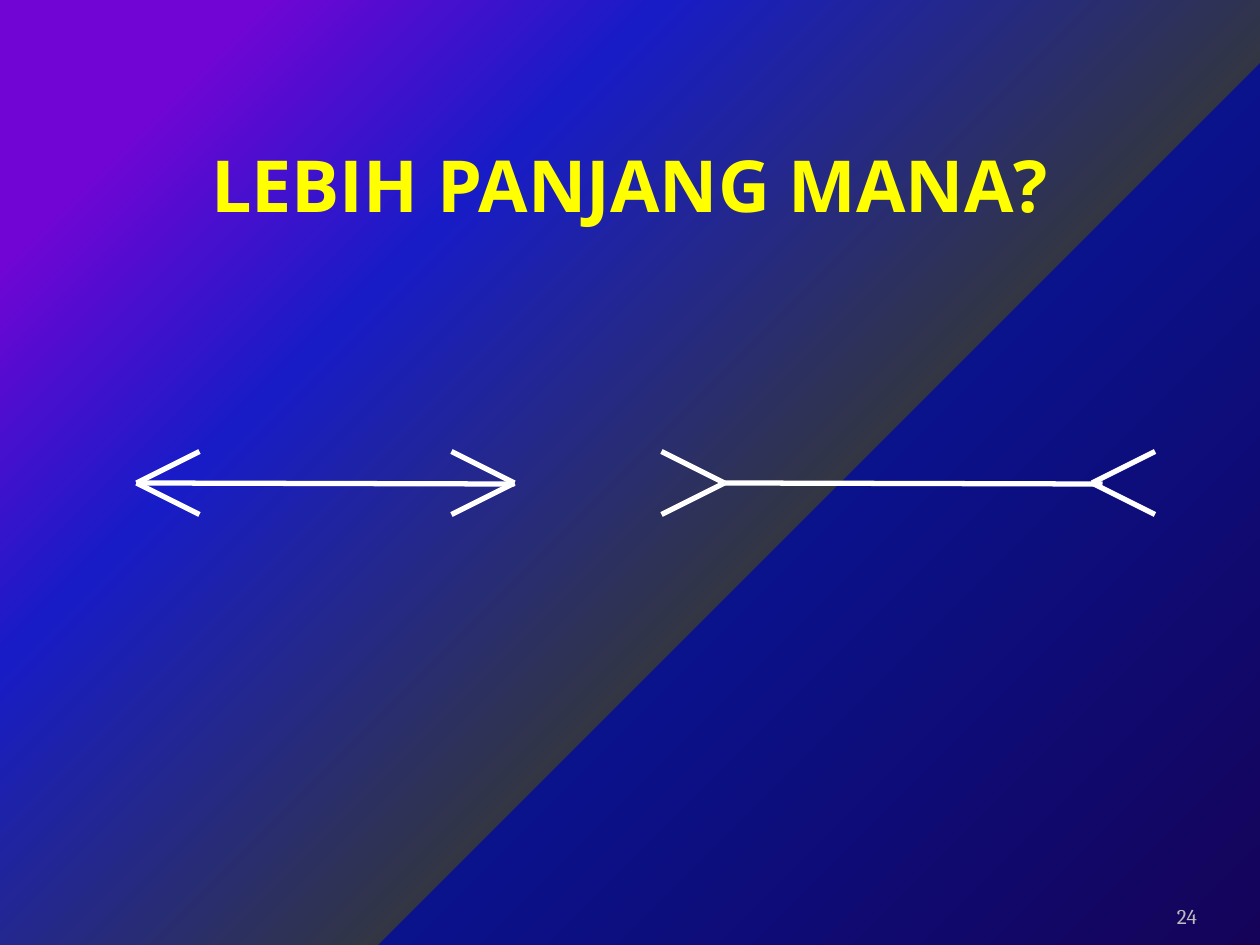
import dataclasses

import lxml.etree
import pptx
import pptx.dml.color
import pptx.enum.shapes
import pptx.enum.text
import pptx.oxml.ns
import pptx.util

ANCHOR = pptx.enum.text.MSO_ANCHOR
ALIGN = pptx.enum.text.PP_ALIGN
qn = pptx.oxml.ns.qn

GRID = 1 / 12  # inches per grid unit
AXIS_ROW = 46
SHAFT_SLOPE = 0.1  # the shafts fall very slightly to the right
FIN_WIDTH, FIN_HEIGHT = 6, 3


@dataclasses.dataclass(frozen=True)
class Theme:
    title_color: str = "FFFF00"
    number_color: str = "BDBDBD"
    line_color: str = "FFFFFF"
    title_font: str = "Open Sans"
    number_font: str = "Cambria"
    title_size: int = 41
    number_size: int = 12
    line_width: int = 3
    backdrop: tuple = ((0, "150359"), (40, "0A128C"), (40, "323643"),
                       (70, "181CC7"), (88, "7005D4"))


THEME = Theme()


def rgb(color):
    return pptx.dml.color.RGBColor.from_string(color)


def place(shape, left, top, width, height):
    shape.left, shape.top, shape.width, shape.height = (
        pptx.util.Inches(length) for length in (left, top, width, height))


def write(shape, text, *, font, size, color, align, anchor, bold=False):
    frame = shape.text_frame
    frame.word_wrap = True
    frame.vertical_anchor = anchor
    paragraph = frame.paragraphs[0]
    paragraph.alignment = align
    run = paragraph.add_run()
    run.text = text
    run.font.name = font
    run.font.size = pptx.util.Pt(size)
    run.font.bold = bold
    run.font.color.rgb = rgb(color)


def paint_backdrop(slide):
    """Fill the background with a gradient centred on the bottom right corner."""
    slide.background.fill.solid()
    properties = slide.element.find(".//" + qn("p:bgPr"))
    gradient = lxml.etree.Element(qn("a:gradFill"), rotWithShape="1")
    stops = lxml.etree.SubElement(gradient, qn("a:gsLst"))
    for percent, color in THEME.backdrop:
        stop = lxml.etree.SubElement(stops, qn("a:gs"), pos=str(percent * 1000))
        lxml.etree.SubElement(stop, qn("a:srgbClr"), val=color)
    circle = lxml.etree.SubElement(gradient, qn("a:path"), attrib={"path": "circle"})
    lxml.etree.SubElement(circle, qn("a:fillToRect"), l="100000", t="100000")
    properties.replace(properties.find(qn("a:solidFill")), gradient)


def draw_line(slide, start, end):
    """Join two (column, row) grid points."""
    line = slide.shapes.add_connector(
        pptx.enum.shapes.MSO_CONNECTOR.STRAIGHT,
        *(pptx.util.Inches(step * GRID) for step in (*start, *end)))
    line.line.color.rgb = rgb(THEME.line_color)
    line.line.width = pptx.util.Pt(THEME.line_width)
    lxml.etree.SubElement(line.element.spPr, qn("a:effectLst"))


def draw_fins(slide, tip, direction):
    """Draw two strokes from the tip; direction is 1 to the right, -1 to the left."""
    for side in (-1, 1):
        draw_line(slide, (tip, AXIS_ROW),
                  (tip + direction * FIN_WIDTH, AXIS_ROW + side * FIN_HEIGHT))


def draw_arrow(slide, left_tip, right_tip, shaft_end, inward):
    draw_line(slide, (left_tip, AXIS_ROW), (shaft_end, AXIS_ROW + SHAFT_SLOPE))
    direction = 1 if inward else -1
    draw_fins(slide, left_tip, direction)
    draw_fins(slide, right_tip, -direction)


def add_title(slide, text):
    title = slide.shapes.title
    place(title, 0.5, 0.83, 9, 1.25)
    write(title, text, font=THEME.title_font, size=THEME.title_size,
          color=THEME.title_color, align=ALIGN.CENTER, anchor=ANCHOR.MIDDLE, bold=True)


def add_page_number(slide, text):
    number = slide.shapes.add_textbox(0, 0, 0, 0)
    place(number, 8.67, 7.02, 0.83, 0.4)
    number.text_frame.margin_left = number.text_frame.margin_right = 0
    write(number, text, font=THEME.number_font, size=THEME.number_size,
          color=THEME.number_color, align=ALIGN.RIGHT, anchor=ANCHOR.BOTTOM)


def main():
    deck = pptx.Presentation()
    deck.slide_width = pptx.util.Inches(10)
    deck.slide_height = pptx.util.Inches(7.5)
    slide = deck.slides.add_slide(deck.slide_layouts.get_by_name("Title Only"))
    paint_backdrop(slide)
    add_title(slide, "LEBIH PANJANG MANA?")
    add_page_number(slide, "24")
    draw_arrow(slide, left_tip=13, right_tip=49, shaft_end=49, inward=True)
    draw_arrow(slide, left_tip=69, right_tip=104, shaft_end=105, inward=False)
    deck.save("out.pptx")


if __name__ == "__main__":
    main()
